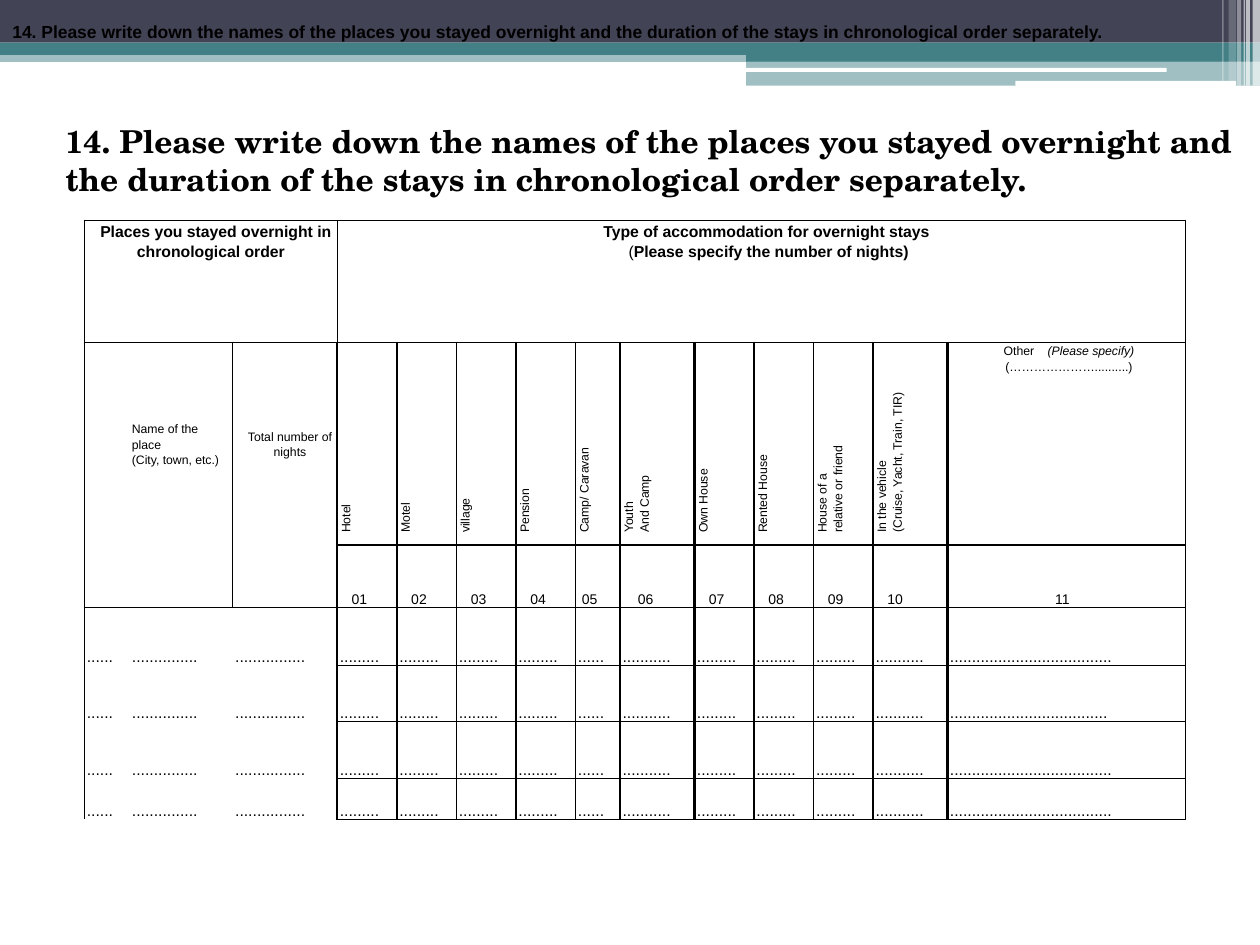
"""Build the survey slide on overnight stays and types of accommodation."""
import lxml.etree
import pptx
import pptx.dml.color
import pptx.enum.shapes
import pptx.enum.text
import pptx.oxml.ns
import pptx.util

Cm = pptx.util.Cm
ALIGN = pptx.enum.text.PP_ALIGN
ANCHOR = pptx.enum.text.MSO_ANCHOR
SHAPE = pptx.enum.shapes.MSO_SHAPE
NAVY, TEAL, WHITE, BLACK = "424456", "438086", "FFFFFF", "000000"

QUESTION = (
    "14. Please write down the names of the places you stayed overnight "
    "and the duration of the stays in chronological order separately."
)
BARS = [
    (0, 1.02, 25.4, 0.23, TEAL, 50),
    (0, 0, 25.4, 0.86, NAVY, 100),
    (0, 0.86, 25.4, 0.25, TEAL, 100),
    (15.04, 0.99, 10.36, 0.25, TEAL, 100),
    (15.04, 1.22, 10.36, 0.51, TEAL, 50),
]
ROUNDED_BARS = [
    (15.01, 1.37, 8.51, 0.08, WHITE, 100),
    (20.47, 1.63, 4.45, 0.1, WHITE, 100),
]
STRIPES = [
    (25.25, 0, 0.15, 1.73, WHITE, 65),
    (25.12, 0, 0.08, 1.73, WHITE, 65),
    (25.07, 0, 0.03, 1.73, WHITE, 60),
    (24.94, 0, 0.08, 1.73, WHITE, 40),
    (24.77, 0, 0.15, 1.63, WHITE, 20),
    (24.64, 0, 0.03, 1.63, WHITE, 30),
]
COLUMN_WIDTHS = [0.91, 2.08, 2.11, 1.2, 1.2, 1.2, 1.2, 0.9, 1.5, 1.2, 1.2, 1.2, 1.5, 4.8]
ROW_HEIGHTS = [2.46, 4.09, 1.26, 1.17, 1.13, 1.15, 0.82]
FIRST_TYPE = 3
THICK_EDGES = (3, 9, 13)
PLACES_HEADER = ["Places you stayed overnight in chronological order"]
TYPES_HEADER = [
    "Type of accommodation for overnight stays",
    [(" (", {"bold": False}), ("Please specify the number of nights)", {})],
]
PLACE_NAME = ["Name of the place", "(City, town, etc.)"]
NIGHTS = ["Total number of nights"]
ACCOMMODATIONS = [
    ["Hotel"],
    ["Motel"],
    ["village"],
    ["Pension"],
    ["Camp/ Caravan"],
    ["Youth", "And Camp"],
    ["Own House"],
    ["Rented House"],
    ["House of a", "relative or friend"],
    ["In the vehicle", "(Cruise, Yacht, Train, TIR)"],
]
FLUSH_TYPES = ("Camp/ Caravan", "Youth", "House of a", "In the vehicle")
OTHER = [
    [("Other", {}), (" ", {"spacing": 5.8}), ("(Please specify)", {"italic": True})],
    "(…………………..........)",
]
CODE_INDENTS = {"05": 0.08, "06": 0.31, "11": 2.12}
DOT_COUNTS = [6, 15, 16, 9, 9, 9, 9, 6, 11, 9, 9, 9, 11]
OTHER_DOT_COUNTS = [37, 36, 37, 37]


def color(hex_string):
    return pptx.dml.color.RGBColor.from_string(hex_string)


def add_element(parent, tag, **attributes):
    element = lxml.etree.SubElement(parent, pptx.oxml.ns.qn(tag))
    for name, value in attributes.items():
        element.set(name, str(value))
    return element


def add_bar(slide, kind, left, top, width, height, fill, opacity):
    shape = slide.shapes.add_shape(kind, Cm(left), Cm(top), Cm(width), Cm(height))
    shape.shadow.inherit = False
    shape.fill.solid()
    shape.fill.fore_color.rgb = color(fill)
    shape.line.fill.background()
    if opacity < 100:
        fill_color = shape.fill._xPr.find(".//" + pptx.oxml.ns.qn("a:srgbClr"))
        add_element(fill_color, "a:alpha", val=opacity * 1000)


def format_run(run, size, bold, font="Arial", italic=False, spacing=0):
    run.font.name = font
    run.font.size = pptx.util.Pt(size)
    run.font.bold = bold
    run.font.italic = italic
    run.font.color.rgb = color(BLACK)
    if spacing:
        run.font._element.set("spc", str(round(spacing * 100)))


def add_question(slide, left, top, width, height, size, font, anchor):
    shape = slide.shapes.add_textbox(Cm(left), Cm(top), Cm(width), Cm(height))
    text_frame = shape.text_frame
    text_frame.word_wrap = True
    text_frame.vertical_anchor = anchor
    text_frame.text = QUESTION
    format_run(text_frame.paragraphs[0].runs[0], size, True, font)


def fill_cell(cell, lines, size, bold=False, align=ALIGN.LEFT, anchor=ANCHOR.TOP,
              left=0, first=0, before=0, vertical=False):
    cell.vertical_anchor = anchor
    if vertical:
        cell._tc.get_or_add_tcPr().set("vert", "vert270")
    text_frame = cell.text_frame
    for index, line in enumerate(lines):
        paragraph = text_frame.add_paragraph() if index else text_frame.paragraphs[0]
        paragraph.alignment = align
        paragraph.line_spacing = 1.15
        paragraph.space_before = pptx.util.Pt(0 if index else before)
        properties = paragraph._p.get_or_add_pPr()
        properties.set("marL", str(Cm(left)))
        properties.set("indent", str(Cm(first)))
        for text, style in [(line, {})] if isinstance(line, str) else line:
            run = paragraph.add_run()
            run.text = text
            format_run(run, size, **{"bold": bold, **style})


def vertical_edge(row, edge):
    if edge in (1, 2) and (edge == 1 or row not in (1, 2)):
        return 0
    return 1.5 if edge in THICK_EDGES and row else 1


def horizontal_edge(edge, column):
    return 1 if column >= FIRST_TYPE or edge in (0, 1, 3) else 0


def style_cell(cell, row, column):
    cell.margin_left = cell.margin_right = Cm(0.05)
    cell.margin_top = cell.margin_bottom = 0
    widths = {
        "a:lnL": vertical_edge(row, column),
        "a:lnR": vertical_edge(row, column + 1),
        "a:lnT": horizontal_edge(row, column),
        "a:lnB": horizontal_edge(row + 1, column),
    }
    properties = cell._tc.get_or_add_tcPr()
    for tag, width in widths.items():
        line = add_element(properties, tag, w=pptx.util.Pt(width))
        if width:
            add_element(add_element(line, "a:solidFill"), "a:srgbClr", val=BLACK)
        else:
            add_element(line, "a:noFill")
    cell.fill.background()


def add_stays_table(slide):
    rows, columns = len(ROW_HEIGHTS), len(COLUMN_WIDTHS)
    table = slide.shapes.add_table(
        rows, columns, Cm(1.7), Cm(4.44), Cm(sum(COLUMN_WIDTHS)), Cm(sum(ROW_HEIGHTS))
    ).table
    table.first_row = table.horz_banding = False
    for column, width in enumerate(COLUMN_WIDTHS):
        table.columns[column].width = Cm(width)
    for row, height in enumerate(ROW_HEIGHTS):
        table.rows[row].height = Cm(height)
        for column in range(columns):
            style_cell(table.cell(row, column), row, column)

    last = columns - 1
    table.cell(0, 0).merge(table.cell(0, FIRST_TYPE - 1))
    table.cell(0, FIRST_TYPE).merge(table.cell(0, last))
    header = {"size": 9, "bold": True, "align": ALIGN.CENTER, "first": 0.2}
    fill_cell(table.cell(0, 0), PLACES_HEADER, **header)
    fill_cell(table.cell(0, FIRST_TYPE), TYPES_HEADER, before=14.5, **header)
    fill_cell(table.cell(1, 1), PLACE_NAME, 7, anchor=ANCHOR.MIDDLE)
    fill_cell(table.cell(1, 2), NIGHTS, 7, align=ALIGN.CENTER, anchor=ANCHOR.MIDDLE, left=0.2)
    for column, lines in enumerate(ACCOMMODATIONS, FIRST_TYPE):
        before = 0 if lines[0] in FLUSH_TYPES else 9.3
        fill_cell(table.cell(1, column), lines, 7, left=0.2, before=before, vertical=True)
    fill_cell(table.cell(1, last), OTHER, 7, align=ALIGN.CENTER, first=0.1, before=9.3)
    for column in range(FIRST_TYPE, columns):
        code = f"{column - FIRST_TYPE + 1:02d}"
        indent = CODE_INDENTS.get(code, 0.24)
        fill_cell(table.cell(2, column), [code], 8, anchor=ANCHOR.BOTTOM, left=indent)
    for row, other_count in enumerate(OTHER_DOT_COUNTS, 3):
        for column, count in enumerate(DOT_COUNTS + [other_count]):
            fill_cell(table.cell(row, column), ["." * count], 9, anchor=ANCHOR.BOTTOM)


def main():
    presentation = pptx.Presentation()
    presentation.slide_width, presentation.slide_height = Cm(25.4), Cm(19.05)
    slide = presentation.slides.add_slide(presentation.slide_layouts[6])
    for kind, bars in ((SHAPE.RECTANGLE, BARS), (SHAPE.ROUNDED_RECTANGLE, ROUNDED_BARS),
                       (SHAPE.RECTANGLE, STRIPES)):
        for bar in bars:
            add_bar(slide, kind, *bar)
    add_stays_table(slide)
    add_question(slide, 0, 0, 25.4, 1.27, 10, "Arial", ANCHOR.MIDDLE)
    add_question(slide, 1.07, 2.34, 24.33, 2.57, 18, "TeX Gyre Schola", ANCHOR.TOP)
    presentation.save("out.pptx")


if __name__ == "__main__":
    main()
